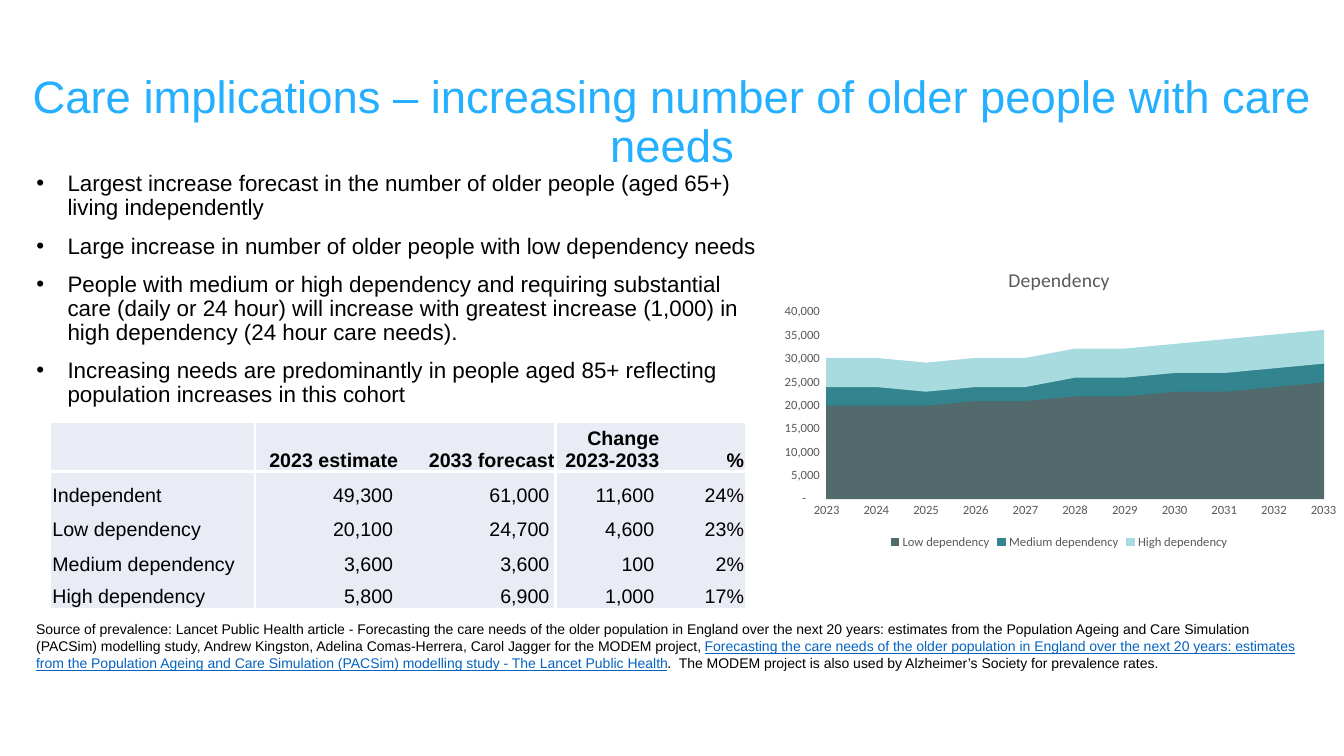
from lxml.etree import SubElement
from pptx import Presentation
from pptx.chart.data import CategoryChartData
from pptx.dml.color import RGBColor
from pptx.enum.chart import XL_CHART_TYPE, XL_LEGEND_POSITION, XL_TICK_MARK
from pptx.enum.text import MSO_ANCHOR, MSO_AUTO_SIZE, PP_ALIGN
from pptx.oxml.ns import qn
from pptx.util import Inches, Pt

BLACK = RGBColor(0x00, 0x00, 0x00)
WHITE = RGBColor(0xFF, 0xFF, 0xFF)
SKY = RGBColor(0x24, 0xAF, 0xFF)
LINK = RGBColor(0x05, 0x63, 0xC1)
PALE = RGBColor(0xE9, 0xEB, 0xF5)
GREY = RGBColor(0x59, 0x59, 0x59)
AXIS = RGBColor(0xD9, 0xD9, 0xD9)
SLATE = RGBColor(0x53, 0x6A, 0x6D)
TEAL = RGBColor(0x32, 0x85, 0x8E)
AQUA = RGBColor(0xA8, 0xDB, 0xE0)

PLAIN_TABLE = "{2D5ABB26-0587-4C30-8999-92F81FD0307C}"
NUMBER_FORMAT = '_-* #,##0_-;\\-* #,##0_-;_-* "-"??_-;_-@_'

TITLE = "Care implications – increasing number of older people with care needs"
BULLETS = [
    "Largest increase forecast in the number of older people (aged 65+)  living independently",
    "Large increase in number of older people with low dependency needs",
    "People with medium or high dependency and requiring substantial care (daily or 24 hour) "
    "will increase with greatest increase (1,000) in high dependency (24 hour care needs).",
    "Increasing needs are predominantly in people aged 85+ reflecting population increases "
    "in this cohort",
]
SOURCE = [
    ("Source of prevalence: Lancet Public Health article - Forecasting the care needs of the "
     "older population in England over the next 20 years: estimates from the Population Ageing "
     "and Care Simulation (PACSim) modelling study, Andrew Kingston, Adelina Comas-Herrera, "
     "Carol Jagger for the MODEM project, ", False),
    ("Forecasting the care needs of the older population in England over the next 20 years: "
     "estimates from the Population Ageing and Care Simulation (PACSim) modelling study - "
     "The Lancet Public Health", True),
    (".  The MODEM project is also used by Alzheimer’s Society for prevalence rates.", False),
]
NEEDS = [
    ["", "2023 estimate", "2033 forecast", "Change 2023-2033", "%"],
    ["Independent", "49,300", "61,000", "11,600", "24%"],
    ["Low dependency", "20,100", "24,700", "4,600", "23%"],
    ["Medium dependency", "3,600", "3,600", "100", "2%"],
    ["High dependency", "5,800", "6,900", "1,000", "17%"],
]
YEARS = [str(year) for year in range(2023, 2034)]
DEPENDENCY = [
    ("Low dependency", SLATE,
     [20000, 20000, 20000, 21000, 21000, 22000, 22000, 23000, 23000, 24000, 25000]),
    ("Medium dependency", TEAL,
     [4000, 4000, 3000, 3000, 3000, 4000, 4000, 4000, 4000, 4000, 4000]),
    ("High dependency", AQUA,
     [6000, 6000, 6000, 6000, 6000, 6000, 6000, 6000, 7000, 7000, 7000]),
]


def style_font(font, size, color, name="Arial", bold=False):
    font.name, font.size, font.bold = name, Pt(size), bold
    font.color.rgb = color


def place(shape, left, top, width, height):
    shape.left, shape.top = Inches(left), Inches(top)
    shape.width, shape.height = Inches(width), Inches(height)


def set_borders(cell, ruled_sides):
    """Draw white rules on the given sides and switch the other sides off."""
    properties = cell._tc.get_or_add_tcPr()
    for side in "LRTB":
        line = SubElement(properties, qn(f"a:ln{side}"), w=str(Pt(2.25)))
        if side in ruled_sides:
            fill = SubElement(line, qn("a:solidFill"))
            SubElement(fill, qn("a:srgbClr"), val=str(WHITE))
        else:
            SubElement(line, qn("a:noFill"))


class CareSlide:
    def __init__(self, presentation):
        self.slide = presentation.slides.add_slide(presentation.slide_layouts[1])

    def title(self, text, *box):
        shape = self.slide.shapes.title
        place(shape, *box)
        frame = shape.text_frame
        frame.text = text
        frame.word_wrap, frame.auto_size = True, MSO_AUTO_SIZE.NONE
        frame.vertical_anchor, frame.margin_bottom = MSO_ANCHOR.BOTTOM, Inches(0.17)
        paragraph = frame.paragraphs[0]
        paragraph.alignment, paragraph.line_spacing = PP_ALIGN.CENTER, 0.9
        style_font(paragraph.font, 32.4, SKY)

    def bullets(self, items, *box):
        shape = self.slide.placeholders[1]
        place(shape, *box)
        frame = shape.text_frame
        frame.auto_size = MSO_AUTO_SIZE.NONE
        for index, item in enumerate(items):
            paragraph = frame.add_paragraph() if index else frame.paragraphs[0]
            paragraph.text = item
            paragraph.line_spacing = 0.9
            paragraph.space_before = Pt(10 if index else 0)
            properties = paragraph._p.get_or_add_pPr()
            properties.set("marL", str(Inches(0.31)))
            properties.set("indent", str(-Inches(0.31)))
            SubElement(properties, qn("a:buFont"), typeface="Arial")
            SubElement(properties, qn("a:buChar"), char="•")
            style_font(paragraph.font, 16, BLACK)

    def source(self, parts, *box):
        frame = self.slide.shapes.add_textbox(*map(Inches, box)).text_frame
        frame.word_wrap = True
        for text, linked in parts:
            run = frame.paragraphs[0].add_run()
            run.text = text
            run.font.underline = linked
            style_font(run.font, 10, LINK if linked else BLACK)

    def table(self, rows, widths, heights, left, top):
        frame = self.slide.shapes.add_table(
            len(rows), len(widths), Inches(left), Inches(top),
            Inches(sum(widths)), Inches(sum(heights)))
        table = frame.table
        table.first_row = table.horz_banding = False
        table._tbl.tblPr.find(qn("a:tableStyleId")).text = PLAIN_TABLE
        for column, width in zip(table.columns, widths):
            column.width = Inches(width)
        for row, height in zip(table.rows, heights):
            row.height = Inches(height)
        for i, row in enumerate(rows):
            for j, text in enumerate(row):
                self.cell(table.cell(i, j), text, i, j)

    def cell(self, cell, text, row, column):
        """Fill one cell, with white rules between column groups and below the header."""
        across = {0: "R", 1: "L", 2: "R", 3: "L"}.get(column, "")
        down = {0: "B", 1: "T"}.get(row, "")
        set_borders(cell, across + down)
        cell.fill.solid()
        cell.fill.fore_color.rgb = PALE
        cell.vertical_anchor = MSO_ANCHOR.BOTTOM
        cell.margin_left = cell.margin_top = Inches(0.01)
        cell.margin_right = Inches(0.06 if row and column in (1, 2, 3) else 0.01)
        cell.margin_bottom = 0
        cell.text = text
        paragraph = cell.text_frame.paragraphs[0]
        paragraph.alignment = PP_ALIGN.RIGHT if column else PP_ALIGN.LEFT
        style_font(paragraph.font, 14, BLACK, bold=row == 0)

    def area_chart(self, title, categories, series, *box):
        data = CategoryChartData(number_format="#,##0")
        data.categories = categories
        for name, _, values in series:
            data.add_series(name, values)
        chart = self.slide.shapes.add_chart(
            XL_CHART_TYPE.AREA_STACKED, *map(Inches, box), data).chart
        style_font(chart.font, 10, BLACK, "Calibri")
        chart.has_title = True
        chart.chart_title.include_in_layout = False
        chart.chart_title.text_frame.text = title
        style_font(chart.chart_title.text_frame.paragraphs[0].font, 14, GREY, "Calibri")
        chart.has_legend = True
        chart.legend.position = XL_LEGEND_POSITION.BOTTOM
        chart.legend.include_in_layout = False
        style_font(chart.legend.font, 9, GREY, "Calibri")
        chart.plots[0].vary_by_categories = False
        for area, (_, color, _) in zip(chart.plots[0].series, series):
            area.format.fill.solid()
            area.format.fill.fore_color.rgb = color
            area.format.line.color.rgb = color
            area.format.line.width = Pt(0.75)
        for axis in (chart.category_axis, chart.value_axis):
            axis.has_major_gridlines = False
            axis.major_tick_mark = axis.minor_tick_mark = XL_TICK_MARK.NONE
            style_font(axis.tick_labels.font, 9, GREY, "Calibri")
        chart.category_axis.format.line.color.rgb = AXIS
        chart.category_axis.format.line.width = Pt(0.75)
        values = chart.value_axis
        values.format.line.fill.background()
        values.minimum_scale, values.maximum_scale, values.major_unit = 0, 40000, 5000
        values.tick_labels.number_format = NUMBER_FORMAT
        values.tick_labels.number_format_is_linked = False
        for crossing in chart._chartSpace.iter(qn("c:crossBetween")):
            crossing.set("val", "midCat")


def main():
    presentation = Presentation()
    presentation.slide_width, presentation.slide_height = Inches(13.33), Inches(7.5)
    care = CareSlide(presentation)
    care.title(TITLE, 0, 1.65, 13.33, 0.23)
    care.bullets(BULLETS, 0.26, 1.66, 7.38, 4.87)
    care.source(SOURCE, 0.26, 6.11, 12.82, 0.61)
    care.table(NEEDS, [2.02, 1.43, 1.55, 1.04, 0.84], [0.48, 0.35, 0.33, 0.35, 0.32], 0.51, 4.2)
    care.area_chart("Dependency", YEARS, DEPENDENCY, 7.64, 2.49, 5.73, 3)
    presentation.save("out.pptx")


if __name__ == "__main__":
    main()
